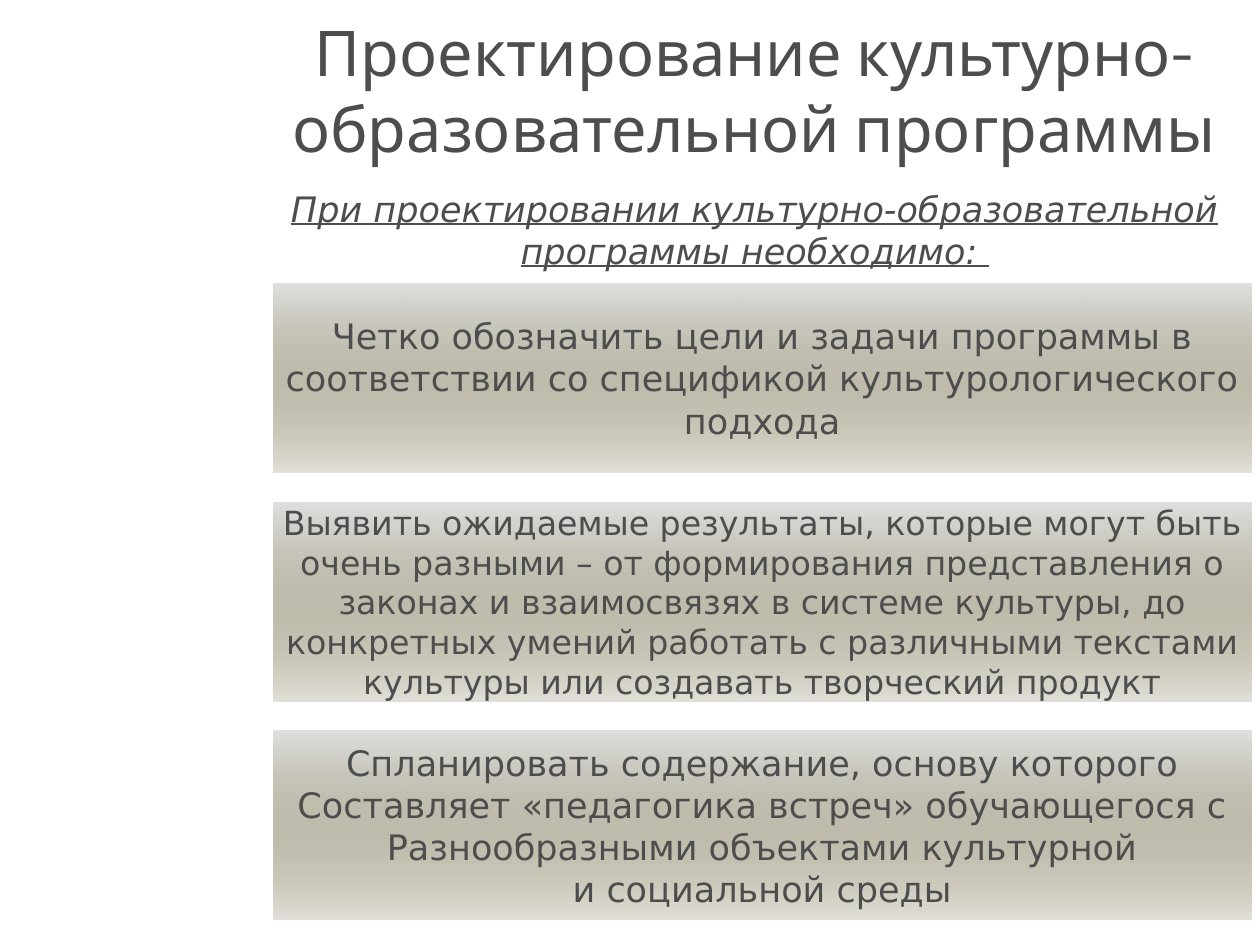
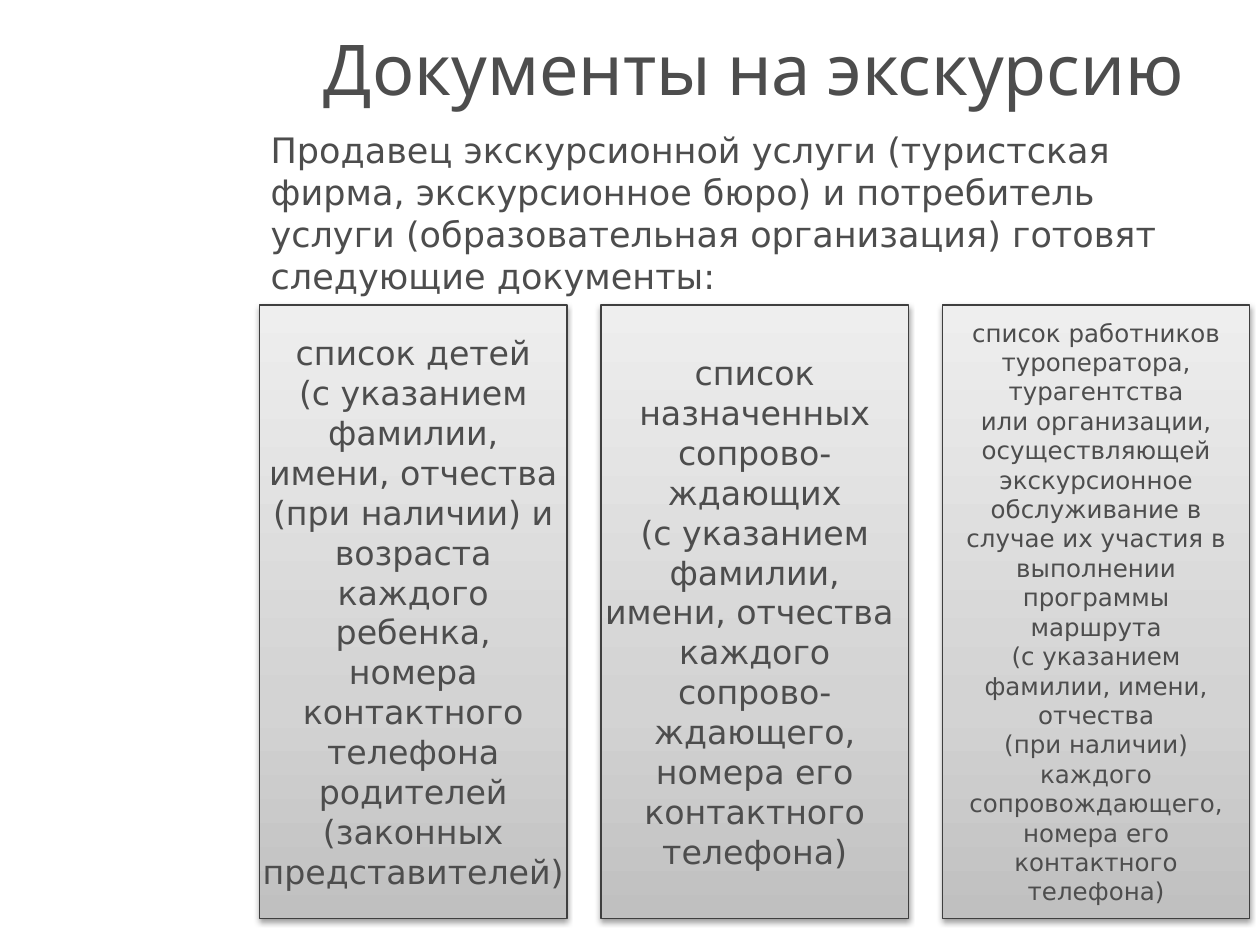
import pptx
import pptx.util
import pptx.dml.color
import pptx.enum.shapes
import pptx.enum.text
import pptx.oxml
import pptx.oxml.ns

Inches, Pt = pptx.util.Inches, pptx.util.Pt
RGBColor = pptx.dml.color.RGBColor
PP_ALIGN = pptx.enum.text.PP_ALIGN
qn = pptx.oxml.ns.qn

TITLE_FONT, BODY_FONT = "Karla", "DejaVu Sans"
TEXT = RGBColor(0x4D, 0x4D, 0x4D)
OUTLINE = RGBColor(0x3F, 0x3F, 0x3F)
SHADOW = RGBColor(0x00, 0x00, 0x00)

# Gradient stops: position in percent, colour, opacity in percent
BAND_STOPS = [
    (0, RGBColor(0xE0, 0xE0, 0xDF), 100),
    (100, RGBColor(0x41, 0x35, 0x01), 15),
]
CARD_STOPS = [
    (0, RGBColor(0xC0, 0xC0, 0xC0), 100),
    (35, RGBColor(0xD3, 0xD3, 0xD3), 100),
    (100, RGBColor(0xEE, 0xEE, 0xEE), 100),
]
TITLE_LEFT, TITLE_TOP, TITLE_WIDTH = 2.05, 0.08, 7.87

DESIGN_TITLE = "Проектирование культурно-образовательной программы"
DESIGN_INTRO = "При проектировании культурно-образовательной программы необходимо: "
# Height, text size, lines
DESIGN_STEPS = [
    (1.5, 20, [
        "Четко обозначить цели и задачи программы в",
        "соответствии со спецификой культурологического",
        "подхода",
    ]),
    (1.58, 19, [
        "Выявить ожидаемые результаты, которые могут быть",
        "очень разными – от формирования представления о",
        "законах и взаимосвязях в системе культуры, до",
        "конкретных умений работать с различными текстами",
        "культуры или создавать творческий продукт",
    ]),
    (1.5, 20, [
        "Спланировать содержание, основу которого",
        "Составляет «педагогика встреч» обучающегося с",
        "Разнообразными объектами культурной",
        "и социальной среды",
    ]),
]

DOCUMENTS_TITLE = "Документы на экскурсию"
DOCUMENTS_INTRO = (
    "Продавец экскурсионной услуги (туристская фирма, экскурсионное бюро) "
    "и потребитель услуги (образовательная организация) готовят "
    "следующие документы:"
)
# Text size, lines
DOCUMENTS = [
    (19, [
        "список детей", "(с указанием", "фамилии,", "имени, отчества",
        "(при наличии) и", "возраста", "каждого", "ребенка,", "номера",
        "контактного", "телефона", "родителей", "(законных",
        "представителей)",
    ]),
    (19, [
        "список", "назначенных", "сопрово-", "ждающих", "(с указанием",
        "фамилии,", "имени, отчества ", "каждого", "сопрово-", "ждающего,",
        "номера его", "контактного", "телефона)",
    ]),
    (14, [
        "список работников", "туроператора,", "турагентства",
        "или организации,", "осуществляющей", "экскурсионное",
        "обслуживание в", "случае их участия в", "выполнении", "программы",
        "маршрута", "(с указанием", "фамилии, имени,", "отчества",
        "(при наличии)", "каждого", "сопровождающего,", "номера его",
        "контактного", "телефона)",
    ]),
]


def write_lines(frame, lines, size, align, font_name=BODY_FONT):
    for index, line in enumerate(lines):
        para = frame.add_paragraph() if index else frame.paragraphs[0]
        para.text = line
        para.alignment = align
        para.font.name = font_name
        para.font.size = Pt(size)
        para.font.color.rgb = TEXT


def add_titled_page(deck, title, size, height):
    page = deck.slides.add_slide(deck.slide_layouts.get_by_name("Title Only"))
    box = page.shapes.title
    box.left, box.top = Inches(TITLE_LEFT), Inches(TITLE_TOP)
    box.width, box.height = Inches(TITLE_WIDTH), Inches(height)
    frame = box.text_frame
    frame.auto_size = pptx.enum.text.MSO_AUTO_SIZE.NONE
    frame.vertical_anchor = pptx.enum.text.MSO_ANCHOR.MIDDLE
    write_lines(frame, [title], size, PP_ALIGN.CENTER, TITLE_FONT)
    return page


def add_intro(page, text, left, top, width, height, align):
    box = page.shapes.add_textbox(
        Inches(left), Inches(top), Inches(width), Inches(height))
    frame = box.text_frame
    frame.word_wrap = True
    frame.auto_size = pptx.enum.text.MSO_AUTO_SIZE.SHAPE_TO_FIT_TEXT
    write_lines(frame, [text], 20, align)
    return frame.paragraphs[0]


def add_colour(parent, colour, opacity):
    node = pptx.oxml.ns.qn("a:srgbClr")
    node = parent.makeelement(node, {"val": str(colour)})
    parent.append(node)
    if opacity < 100:
        alpha = {"val": str(opacity * 1000)}
        node.append(node.makeelement(qn("a:alpha"), alpha))


def set_gradient(shape, stops, angle):
    """Fill with the stops; the angle runs counter-clockwise from the right."""
    shape.fill.gradient()
    shape.fill.gradient_angle = angle
    stop_list = shape.element.spPr.find(qn("a:gradFill")).find(qn("a:gsLst"))
    for old_stop in list(stop_list):
        stop_list.remove(old_stop)
    for position, colour, opacity in stops:
        stop = stop_list.makeelement(qn("a:gs"), {"pos": str(position * 1000)})
        stop_list.append(stop)
        add_colour(stop, colour, opacity)


def set_drop_shadow(shape):
    effects = shape.element.spPr.find(qn("a:effectLst"))
    shadow = effects.makeelement(qn("a:outerShdw"), {
        "blurRad": str(Pt(3.1)), "dist": str(Pt(1.6)),
        "dir": "5400000", "rotWithShape": "0",
    })
    effects.append(shadow)
    add_colour(shadow, SHADOW, 38)


def add_panel(page, left, top, width, height, lines, size, stops, angle):
    panel = page.shapes.add_shape(
        pptx.enum.shapes.MSO_SHAPE.RECTANGLE,
        Inches(left), Inches(top), Inches(width), Inches(height))
    set_gradient(panel, stops, angle)
    panel.line.fill.background()
    panel.shadow.inherit = False
    frame = panel.text_frame
    frame.word_wrap = False
    frame.vertical_anchor = pptx.enum.text.MSO_ANCHOR.MIDDLE
    write_lines(frame, lines, size, PP_ALIGN.CENTER)
    return panel


def build_design_page(deck):
    page = add_titled_page(deck, DESIGN_TITLE, 36, 1.26)
    intro = add_intro(page, DESIGN_INTRO, 2.17, 1.44, 7.64, 0.77,
                      PP_ALIGN.CENTER)
    intro.font.italic = True
    intro.font.underline = True

    top, bottom = 2.25, 7.3
    used = sum(height for height, size, lines in DESIGN_STEPS)
    gap = (bottom - top - used) / (len(DESIGN_STEPS) - 1)
    for height, size, lines in DESIGN_STEPS:
        add_panel(page, 2.17, top, 7.76, height, lines, size, BAND_STOPS, 270)
        top += height + gap


def build_documents_page(deck):
    page = add_titled_page(deck, DOCUMENTS_TITLE, 40, 0.91)
    add_intro(page, DOCUMENTS_INTRO, 2.05, 0.97, 7.66, 1.45, PP_ALIGN.LEFT)

    left, pitch = 2.06, 2.71
    for column, (size, lines) in enumerate(DOCUMENTS):
        card = add_panel(page, left + column * pitch, 2.42, 2.44, 4.87,
                         lines, size, CARD_STOPS, 90)
        card.line.color.rgb = OUTLINE
        card.line.width = Pt(0.75)
        set_drop_shadow(card)


def main():
    deck = pptx.Presentation()
    deck.slide_width, deck.slide_height = Inches(10), Inches(7.5)
    build_design_page(deck)
    build_documents_page(deck)
    deck.save("out.pptx")


if __name__ == "__main__":
    main()
